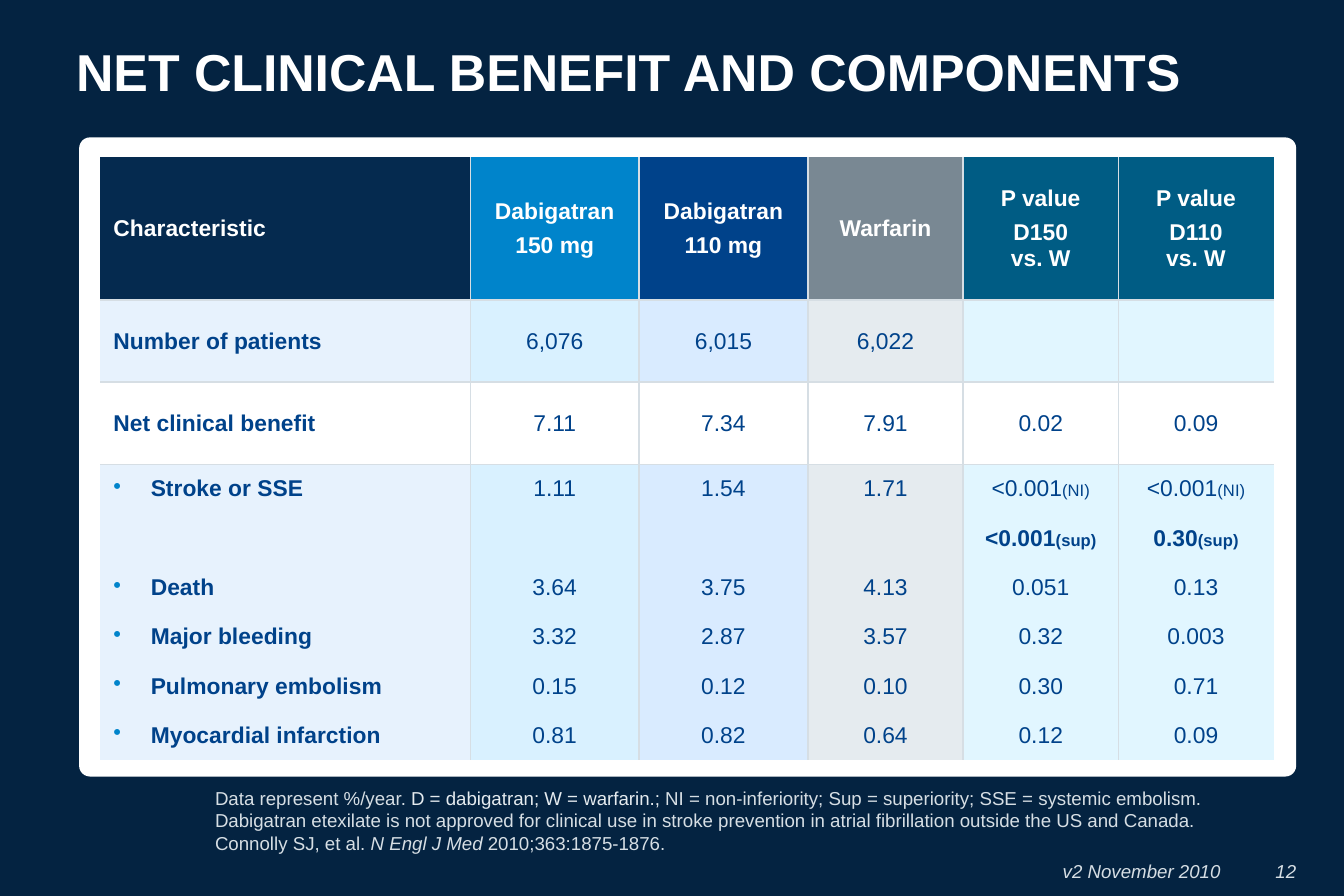
from dataclasses import dataclass

from lxml import etree
from pptx import Presentation
from pptx import util as u
from pptx.dml.color import RGBColor
from pptx.enum import shapes, text
from pptx.oxml import ns

LEFT, MID, RIGHT = text.PP_ALIGN.LEFT, text.PP_ALIGN.CENTER, text.PP_ALIGN.RIGHT


@dataclass(frozen=True)
class Theme:
    face: str = "Arial"
    back: str = "042341"
    white: str = "FFFFFF"
    ink: str = "00428A"
    rule: str = "D6DEE4"
    pale: str = "E5EBEF"
    bullet: str = "0084CB"
    heads: tuple = ("052A4F", "0084CB", "00428A", "798893", "005C84", "005C84")
    tints: tuple = ("E7F2FD", "D9F1FF", "D9EBFF", "E5EBEF", "E1F6FF", "E1F6FF")
    title: float = 25
    body: float = 11
    small: float = 8
    note: float = 9


T = Theme()

COLS = (2.48, 1.13, 1.13, 1.04, 1.04, 1.04)
ROWS = (0.96, 0.55, 0.55) + (0.33,) * 6
# "|" parts paragraphs, "\v" breaks a line
DATA = (
    ("Characteristic", "Dabigatran|150 mg", "Dabigatran|110 mg", "Warfarin",
     "P value|D150\vvs. W", "P value|D110\vvs. W"),
    ("Number of patients", "6,076", "6,015", "6,022", "", ""),
    ("Net clinical benefit", "7.11", "7.34", "7.91", "0.02", "0.09"),
    ("Stroke or SSE", "1.11", "1.54", "1.71", "<0.001(NI)", "<0.001(NI)"),
    ("", "", "", "", "<0.001(sup)", "0.30(sup)"),
    ("Death", "3.64", "3.75", "4.13", "0.051", "0.13"),
    ("Major bleeding", "3.32", "2.87", "3.57", "0.32", "0.003"),
    ("Pulmonary embolism", "0.15", "0.12", "0.10", "0.30", "0.71"),
    ("Myocardial infarction", "0.81", "0.82", "0.64", "0.12", "0.09"),
)
PLAIN_ROW, FIRST_PART, SUP_ROW = 2, 3, 4
NOTES = (
    (("Data represent %/year. ", T.rule, False),
     ("D = dabigatran; W = warfarin.; ", T.pale, False),
     ("NI = non-inferiority; Sup = superiority; SSE = systemic embolism.", T.rule, False)),
    (("Dabigatran etexilate is not approved for clinical use in stroke prevention "
      "in atrial fibrillation outside the US and Canada.", T.rule, False),),
    (("Connolly SJ, et al. ", T.rule, False),
     ("N Engl J Med ", T.rule, True),
     ("2010;363:1875-1876.", T.rule, False)),
)


def rgb(code):
    return RGBColor.from_string(code)


def inches(box):
    return [u.Inches(v) for v in box]


def style(font, size, color, bold=False, italic=False):
    font.name, font.size = T.face, u.Pt(size)
    font.bold, font.italic = bold, italic
    font.color.rgb = rgb(color)


def set_frame(frame, anchor, foot=0):
    frame.auto_size = text.MSO_AUTO_SIZE.NONE
    frame.word_wrap = True
    frame.vertical_anchor = anchor
    frame.margin_left = frame.margin_right = frame.margin_top = 0
    frame.margin_bottom = u.Inches(foot)


def add_title(slide, box, words):
    title = slide.shapes.title
    title.left, title.top, title.width, title.height = inches(box)
    set_frame(title.text_frame, text.MSO_ANCHOR.BOTTOM, foot=0.36)
    title.text_frame.text = words
    para = title.text_frame.paragraphs[0]
    para.alignment, para.line_spacing = LEFT, 0.9
    style(para.font, T.title, T.white, bold=True)


def add_panel(slide, box):
    panel = slide.shapes.add_shape(shapes.MSO_SHAPE.ROUNDED_RECTANGLE, *inches(box))
    panel.adjustments[0] = 0.017
    panel.shadow.inherit = False
    panel.fill.solid()
    panel.fill.fore_color.rgb = rgb(T.white)
    panel.line.fill.background()


def set_edges(cell, shown):
    props = cell._tc.get_or_add_tcPr()
    for side in "LRTB":
        line = etree.SubElement(props, ns.qn("a:ln" + side), w=str(u.Pt(1)))
        if side in shown:
            fill = etree.SubElement(line, ns.qn("a:solidFill"))
            etree.SubElement(fill, ns.qn("a:srgbClr"), val=T.rule)
        else:
            etree.SubElement(line, ns.qn("a:noFill"))


def add_bullet(para):
    props = para._p.get_or_add_pPr()
    props.set("marL", str(u.Inches(0.25)))
    props.set("indent", str(u.Inches(-0.25)))
    tint = etree.SubElement(props, ns.qn("a:buClr"))
    etree.SubElement(tint, ns.qn("a:srgbClr"), val=T.bullet)
    etree.SubElement(props, ns.qn("a:buChar"), char="•")


def fill_cell(cell, words, row, col):
    # Inner rules: every column, and below the first three rows
    edges = ("L" if col else "") + ("R" if col < len(COLS) - 1 else "")
    edges += ("T" if 0 < row <= FIRST_PART else "") + ("B" if row < FIRST_PART else "")
    set_edges(cell, edges)
    tint = T.heads[col] if row == 0 else T.white if row == PLAIN_ROW else T.tints[col]
    cell.fill.solid()
    cell.fill.fore_color.rgb = rgb(tint)
    cell.vertical_anchor = text.MSO_ANCHOR.MIDDLE
    cell.margin_left = cell.margin_right = u.Inches(0.09)
    cell.margin_top = cell.margin_bottom = u.Inches(0.04)

    parts = words.split("|")
    cell.text = "\n".join(parts)
    for num, para in enumerate(cell.text_frame.paragraphs):
        para.alignment = MID if col else LEFT
        if num < len(parts) - 1:
            para.space_after = u.Pt(4.4)
        if words and col == 0 and row >= FIRST_PART:
            add_bullet(para)
        bold = row == 0 or col == 0 or row == SUP_ROW
        style(para.font, T.body, T.ink if row else T.white, bold=bold)
        value, mark, tag = parts[num].partition("(")
        if mark:
            para.runs[0].text = value
            run = para.add_run()
            run.text = mark + tag
            run.font.size = u.Pt(T.small)


def add_grid(slide, box):
    table = slide.shapes.add_table(len(ROWS), len(COLS), *inches(box)).table
    table.first_row = table.horz_banding = False
    for column, width in zip(table.columns, COLS):
        column.width = u.Inches(width)
    for line, height in zip(table.rows, ROWS):
        line.height = u.Inches(height)
    for row, values in enumerate(DATA):
        for col, words in enumerate(values):
            fill_cell(table.cell(row, col), words, row, col)


def add_notes(slide, box):
    frame = slide.shapes.add_textbox(*inches(box)).text_frame
    set_frame(frame, text.MSO_ANCHOR.BOTTOM)
    for num, pieces in enumerate(NOTES):
        para = frame.add_paragraph() if num else frame.paragraphs[0]
        for words, color, italic in pieces:
            run = para.add_run()
            run.text = words
            style(run.font, T.note, color, italic=italic)


def add_label(slide, box, words, align):
    frame = slide.shapes.add_textbox(*inches(box)).text_frame
    set_frame(frame, text.MSO_ANCHOR.MIDDLE)
    frame.word_wrap = False
    frame.text = words
    para = frame.paragraphs[0]
    para.alignment = align
    style(para.font, T.note, T.rule, italic=True)


def add_board(slide, box):
    left, top, width, height = box
    add_panel(slide, box)
    add_grid(slide, (left + 0.14, top + 0.13, sum(COLS), sum(ROWS)))


def main():
    deck = Presentation()
    deck.slide_width, deck.slide_height = u.Inches(9), u.Inches(6)
    slide = deck.slides.add_slide(deck.slide_layouts.get_by_name("Title Only"))
    slide.background.fill.solid()
    slide.background.fill.fore_color.rgb = rgb(T.back)

    # Title, table on its panel, notes and footer
    add_title(slide, (0.51, 0.17, 8.17, 0.88), "NET CLINICAL BENEFIT AND COMPONENTS")
    add_board(slide, (0.53, 0.92, 8.15, 4.28))
    add_notes(slide, (1.44, 5.45, 7.2, 0.27))
    add_label(slide, (7.11, 5.76, 1.07, 0.15), "v2 November 2010", MID)
    add_label(slide, (8.53, 5.76, 0.15, 0.15), "12", RIGHT)
    deck.save("out.pptx")


if __name__ == "__main__":
    main()
